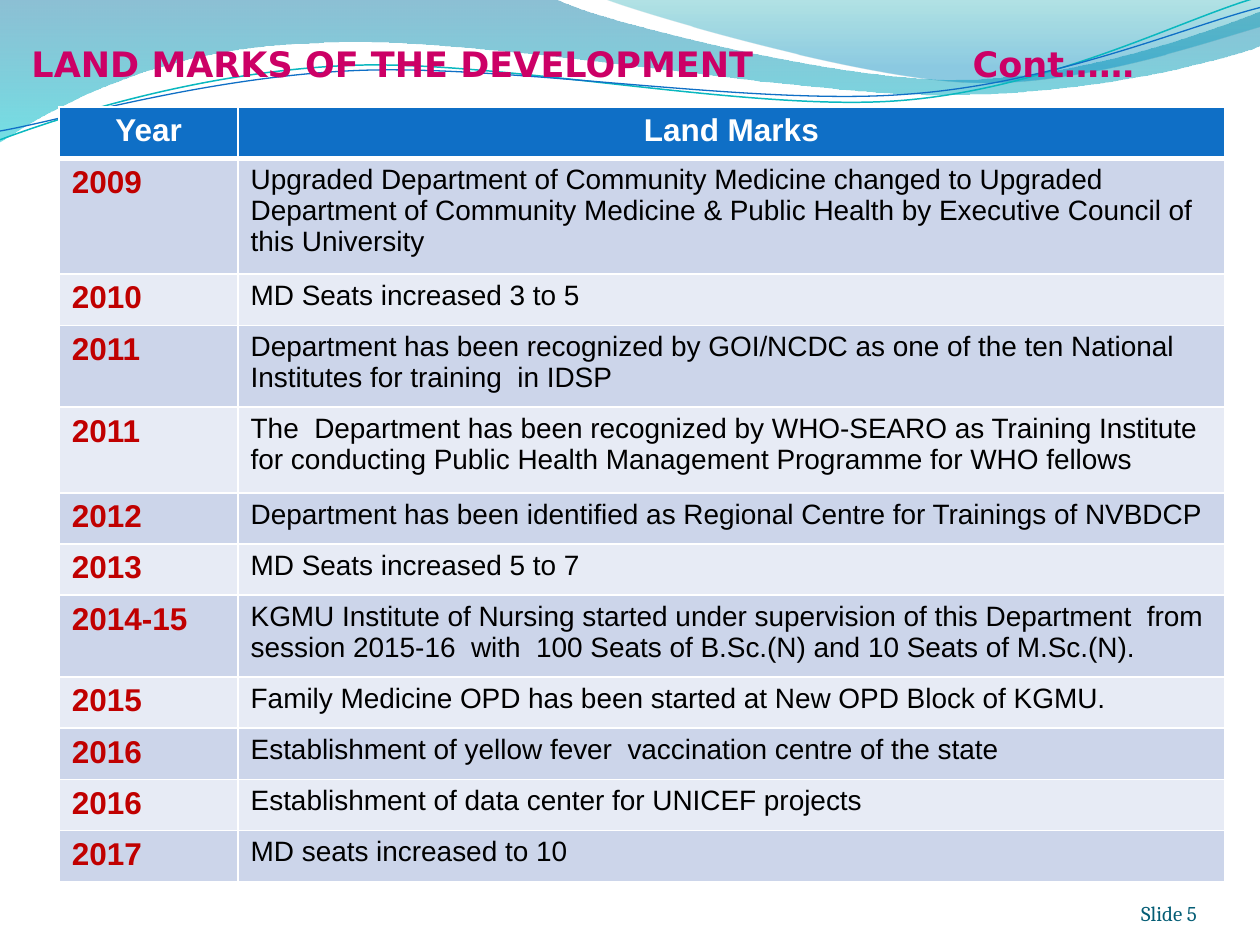
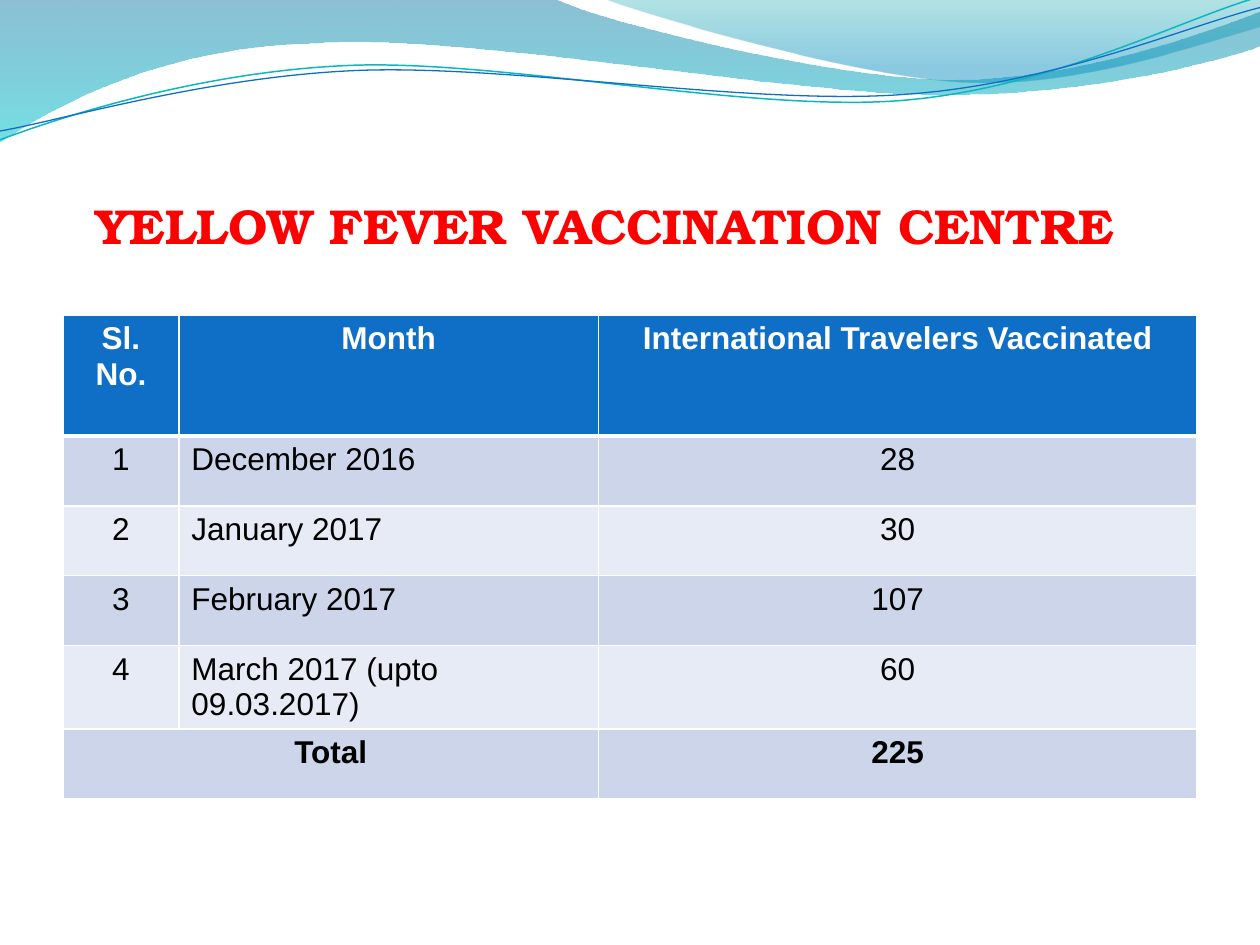
from dataclasses import dataclass

from pptx import Presentation
from pptx.dml.color import RGBColor
from pptx.enum.text import MSO_ANCHOR, PP_ALIGN
from pptx.oxml.ns import qn
from pptx.util import Inches, Pt
from lxml.etree import SubElement


@dataclass(frozen=True)
class Theme:
    blue: str = "0F6FC6"
    teal: str = "0AB8BF"
    white: str = "FFFFFF"
    black: str = "000000"
    magenta: str = "CC0066"
    red: str = "FF0000"
    dark_red: str = "C00000"
    footer: str = "045D75"
    bands: tuple = ("CCD5EA", "E7EBF5")
    body_font: str = "Arial"
    footer_font: str = "Cambria"
    table_size: int = 18
    detail_size: int = 16
    footer_size: int = 12
    grid_width: int = 1
    header_rule: int = 3


THEME = Theme()
LEFT, CENTER, RIGHT = PP_ALIGN.LEFT, PP_ALIGN.CENTER, PP_ALIGN.RIGHT

# Each wave is a start point and its segments: two numbers for a line, six for a curve.
BROAD_WAVE = ((0, 0), [
    (4.4, -0.01), (4.76, 0.17, 6.64, 0.63, 7.58, 0.63),
    (8.53, 0.63, 9.58, 0.26, 10, 0.09), (10.01, 0.36),
    (9.83, 0.44, 8.7, 0.76, 7.46, 0.75), (6.22, 0.75, 3.82, 0.28, 2.57, 0.34),
    (1.29, 0.36, 0.46, 0.83, -0.01, 1.13), (0, 0)])
CORNER_WAVE = ((4.79, -0.01), [
    (5.09, 0.11, 6.82, 0.62, 7.69, 0.65), (8.56, 0.69, 9.61, 0.32, 10, 0.21),
    (10, 0), (4.79, -0.01)])
TEAL_LINE = ((0, 1.11), [
    (0.48, 0.93, 1.58, 0.57, 2.77, 0.52), (3.95, 0.47, 5.93, 0.89, 7.13, 0.8),
    (8.33, 0.71, 9.38, 0.15, 9.98, -0.02)])
BLUE_LINE = ((0, 1.04), [
    (0.47, 0.96, 1.64, 0.61, 2.83, 0.56), (4.03, 0.51, 5.97, 0.84, 7.17, 0.75),
    (8.36, 0.67, 9.41, 0.21, 10, 0.06)])

LANDMARKS = [
    ("Year", "Land Marks"),
    ("2009", "Upgraded Department of Community Medicine changed to Upgraded Department of "
             "Community Medicine & Public Health by Executive Council of this University"),
    ("2010", "MD Seats increased 3 to 5"),
    ("2011", "Department has been recognized by GOI/NCDC as one of the ten National "
             "Institutes for training  in IDSP"),
    ("2011", "The  Department has been recognized by WHO-SEARO as Training Institute for "
             "conducting Public Health Management Programme for WHO fellows"),
    ("2012", "Department has been identified as Regional Centre for Trainings of NVBDCP"),
    ("2013", "MD Seats increased 5 to 7"),
    ("2014-15", "KGMU Institute of Nursing started under supervision of this Department  from "
                "session 2015-16  with  100 Seats of B.Sc.(N) and 10 Seats of M.Sc.(N)."),
    ("2015", "Family Medicine OPD has been started at New OPD Block of KGMU."),
    ("2016", "Establishment of yellow fever  vaccination centre of the state"),
    ("2016", "Establishment of data center for UNICEF projects"),
    ("2017", "MD seats increased to 10"),
]
VACCINATIONS = [
    ("Sl. No.", "Month", "International Travelers Vaccinated"),
    ("1", "December 2016", "28"),
    ("2", "January 2017", "30"),
    ("3", "February 2017", "107"),
    ("4", "March 2017 (upto 09.03.2017)", "60"),
    ("Total", "", "225"),
]


def rgb(value):
    return RGBColor.from_string(value)


def style(para, font, size, color, bold=False, align=LEFT):
    para.alignment = align
    para.font.name = font
    para.font.size = Pt(size)
    para.font.color.rgb = rgb(color)
    para.font.bold = bold


def bend_segments(shape, segments):
    """Turn the straight pieces of a freeform into Bézier curves where six numbers are given."""
    pieces = list(shape.element.spPr.iter(qn("a:lnTo")))
    for piece, segment in zip(pieces, segments):
        if len(segment) == 6:
            curve = SubElement(piece.getparent(), qn("a:cubicBezTo"))
            for x, y in zip(segment[::2], segment[1::2]):
                SubElement(curve, qn("a:pt"), x=str(Inches(x) - shape.left),
                           y=str(Inches(y) - shape.top))
            piece.getparent().replace(piece, curve)


def add_wave(page, wave, closed):
    start, segments = wave
    builder = page.shapes.build_freeform(*map(Inches, start))
    builder.add_line_segments([tuple(map(Inches, segment[-2:])) for segment in segments],
                              close=closed)
    shape = builder.convert_to_shape()
    bend_segments(shape, segments)
    shape.shadow.inherit = False
    return shape


def add_filled_wave(page, wave, stops):
    """Fill a wave from top to bottom; each stop is a position, colour and opacity."""
    shape = add_wave(page, wave, True)
    shape.line.fill.background()
    shape.fill.gradient()
    shape.fill.gradient_angle = 270
    for stop, (position, color, _) in zip(shape.fill.gradient_stops, stops):
        stop.position = position
        stop.color.rgb = rgb(color)
    colors = shape.element.spPr.iter(qn("a:srgbClr"))
    for color, (_, _, opacity) in zip(colors, stops):
        SubElement(color, qn("a:alpha"), val=str(opacity * 1000))


def add_wave_line(page, wave, color, width):
    shape = add_wave(page, wave, False)
    shape.fill.background()
    shape.line.color.rgb = rgb(color)
    shape.line.width = Pt(width)


def add_page(deck):
    """Add a blank page with the wave banner."""
    page = deck.slides.add_slide(deck.slide_layouts[6])
    add_filled_wave(page, BROAD_WAVE, [(0, "0074A1", 45), (1, "00C6CF", 55)])
    add_filled_wave(page, CORNER_WAVE, [(0, "00A1A9", 30), (0.8, "008BBF", 45)])
    add_wave_line(page, TEAL_LINE, THEME.teal, 0.85)
    add_wave_line(page, BLUE_LINE, THEME.blue, 0.75)
    return page


def add_text(page, box, text, inset=(0, 0, 0, 0), **look):
    frame = page.shapes.add_textbox(*map(Inches, box)).text_frame
    frame.word_wrap = True
    frame.vertical_anchor = MSO_ANCHOR.BOTTOM
    (frame.margin_left, frame.margin_top,
     frame.margin_right, frame.margin_bottom) = map(Inches, inset)
    para = frame.paragraphs[0]
    para.text = text
    style(para, **look)
    return para


def add_title(page, box, text, font, size, color, indent=0):
    return add_text(page, box, text, (indent, 0.05, 0, 0),
                    font=font, size=size, color=color, bold=True)


def add_tab_stop(para, position):
    tabs = SubElement(para._p.get_or_add_pPr(), qn("a:tabLst"))
    SubElement(tabs, qn("a:tab"), pos=str(Inches(position)), algn="l")


def set_borders(cell, top, bottom):
    properties = cell._tc.get_or_add_tcPr()
    grid = THEME.grid_width
    for side, width in (("L", grid), ("R", grid), ("T", top), ("B", bottom)):
        line = SubElement(properties, qn(f"a:ln{side}"), w=str(Pt(width)))
        fill = SubElement(line, qn("a:solidFill"))
        SubElement(fill, qn("a:srgbClr"), val=THEME.white)


def add_banded_table(page, left, top, widths, heights, rows, column_looks):
    """Add a table with a blue header; column_looks style the body cells."""
    frame = page.shapes.add_table(len(rows), len(widths), Inches(left), Inches(top),
                                  Inches(sum(widths)), Inches(sum(heights)))
    table = frame.table
    for column, width in zip(table.columns, widths):
        column.width = Inches(width)
    header_look = dict(size=THEME.table_size, color=THEME.white, bold=True, align=CENTER)
    for index, (row, height, texts) in enumerate(zip(table.rows, heights, rows)):
        row.height = Inches(height)
        for cell, text, look in zip(row.cells, texts, column_looks):
            set_borders(cell, THEME.header_rule if index == 1 else THEME.grid_width,
                        THEME.header_rule if index == 0 else THEME.grid_width)
            cell.margin_bottom = Inches(0.01)
            cell.fill.solid()
            cell.fill.fore_color.rgb = rgb(THEME.bands[(index - 1) % 2] if index else THEME.blue)
            para = cell.text_frame.paragraphs[0]
            para.text = text
            style(para, THEME.body_font, **(look if index else header_look))
    return table


def build_landmarks(deck):
    page = add_page(deck)
    title = add_title(page, (0.25, 0.25, 9, 0.42), "LAND MARKS OF THE DEVELOPMENT\tCont……",
                      "DejaVu Sans", 20, THEME.magenta)
    add_tab_stop(title, 7.47)
    three_lines, two_lines, two_lines_loose = 0.92, 0.65, 0.68
    one_line = (6.15 - three_lines - 2 * two_lines - two_lines_loose) / 8
    heights = [one_line, three_lines, one_line, two_lines, two_lines_loose,
               one_line, one_line, two_lines] + [one_line] * 4
    looks = [dict(size=THEME.table_size, color=THEME.dark_red, bold=True),
             dict(size=THEME.detail_size, color=THEME.black)]
    add_banded_table(page, 0.47, 0.85, (1.42, 7.83), heights, LANDMARKS, looks)
    add_text(page, (8.67, 6.95, 0.83, 0.4), "Slide 5", font=THEME.footer_font,
             size=THEME.footer_size, color=THEME.footer, align=RIGHT)


def build_vaccinations(deck):
    page = add_page(deck)
    add_title(page, (0.5, 1.17, 9, 0.85), "YELLOW FEVER VACCINATION CENTRE",
              "TeX Gyre Bonum", 28, THEME.red, indent=0.26)
    header, two_lines = 0.96, 0.66
    one_line = (3.84 - header - two_lines) / 4
    heights = [header] + [one_line] * 3 + [two_lines, one_line]
    looks = [dict(size=THEME.table_size, color=THEME.black, align=align)
             for align in (CENTER, LEFT, CENTER)]
    table = add_banded_table(page, 0.5, 2.5, (0.92, 3.33, 4.75), heights,
                             VACCINATIONS, looks)
    total_row = len(VACCINATIONS) - 1
    table.cell(total_row, 0).merge(table.cell(total_row, 1))
    for column in (0, 2):
        table.cell(total_row, column).text_frame.paragraphs[0].font.bold = True


def main():
    deck = Presentation()
    deck.slide_width, deck.slide_height = Inches(10), Inches(7.5)
    build_landmarks(deck)
    build_vaccinations(deck)
    deck.save("out.pptx")


if __name__ == "__main__":
    main()
